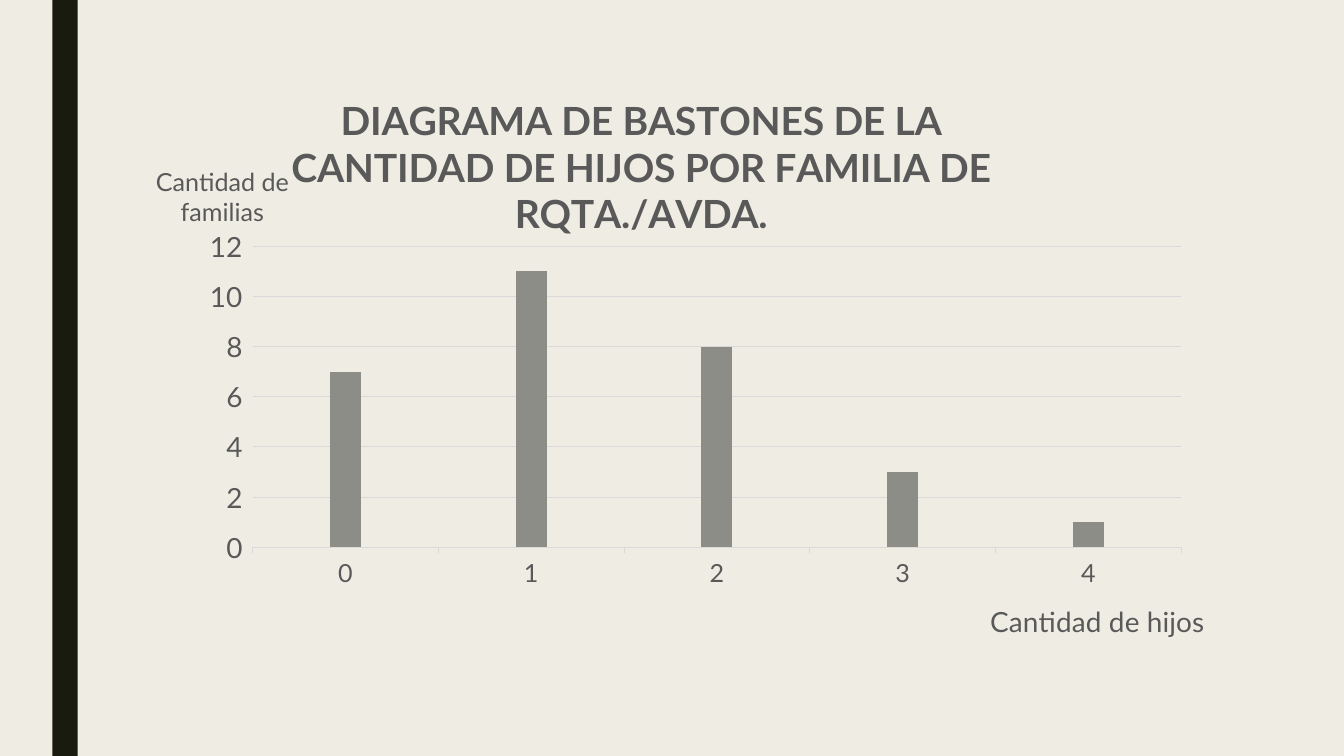
from dataclasses import dataclass

from lxml import etree
from pptx import Presentation
from pptx.chart.data import CategoryChartData
from pptx.dml.color import RGBColor
from pptx.enum.chart import XL_CHART_TYPE, XL_TICK_MARK
from pptx.enum.shapes import MSO_SHAPE
from pptx.oxml.ns import qn
from pptx.util import Inches, Pt

COLUMNS = XL_CHART_TYPE.COLUMN_CLUSTERED
RECTANGLE = MSO_SHAPE.RECTANGLE
TICK_OUTSIDE = XL_TICK_MARK.OUTSIDE

TITLE = ["DIAGRAMA DE BASTONES DE LA", "CANTIDAD DE HIJOS POR FAMILIA DE RQTA./AVDA."]
CHILDREN_LABEL = ["Cantidad de hijos"]
FAMILIES_LABEL = ["Cantidad de familias"]
FAMILIES_BY_CHILDREN = {"0": 7, "1": 11, "2": 8, "3": 3, "4": 1}

SLIDE_SIZE = (13.33, 7.5)
STRIPE_BOX = (0.52, 0, 0.25, 7.5)
CHART_BOX = (1.5, 0.8, 10.5, 5.62)

# Shares of the chart's size: left, top and, for the plot, width and height
TITLE_PLACE = (0.13, 0.02)
FAMILIES_PLACE = (0.0, 0.14)
CHILDREN_PLACE = (0.79, 0.92)
PLOT_PLACE = (0.096, 0.296, 0.88, 0.537)


@dataclass(frozen=True)
class Theme:
    font: str = "Lato"
    background: str = "EFEDE3"
    stripe: str = "191B0E"
    text: str = "595959"
    rule: str = "D9D9D9"
    column: str = "8C8D86"
    title_size: int = 28
    large: int = 20
    small: int = 18
    rule_width: float = 0.75


THEME = Theme()


def color(value):
    return RGBColor.from_string(value)


def format_font(font, size, bold=False):
    font.name = THEME.font
    font.size = Pt(size)
    font.bold = bold
    font.color.rgb = color(THEME.text)


def format_rule(line):
    line.color.rgb = color(THEME.rule)
    line.width = Pt(THEME.rule_width)


def place(part, shares, index, inner=False):
    """Give a chart part a manual layout as its child at the given index."""
    for automatic in part.findall(qn("c:layout")):
        part.remove(automatic)
    layout = etree.Element(qn("c:layout"))
    part.insert(index, layout)
    manual = etree.SubElement(layout, qn("c:manualLayout"))
    settings = [("layoutTarget", "inner")] if inner else []
    settings += [("xMode", "edge"), ("yMode", "edge")]
    settings += zip("xywh", shares)
    for name, value in settings:
        etree.SubElement(manual, qn(f"c:{name}")).set("val", str(value))


def write_title(title, lines, shares, size, bold=False):
    frame = title.text_frame
    for index, text in enumerate(lines):
        para = frame.paragraphs[0] if index == 0 else frame.add_paragraph()
        format_font(para.font, size, bold)
        span = para.add_run()
        span.text = text
        format_font(span.font, size, bold)
    for body in title.element.iter(qn("a:bodyPr")):
        body.set("rot", "0")
        body.set("vert", "horz")
    place(title.element, shares, index=1)


def add_stripe(slide):
    stripe = slide.shapes.add_shape(RECTANGLE, *map(Inches, STRIPE_BOX))
    stripe.shadow.inherit = False
    stripe.fill.solid()
    stripe.fill.fore_color.rgb = color(THEME.stripe)
    stripe.line.fill.background()


def add_families_chart(slide):
    data = CategoryChartData()
    data.categories = list(FAMILIES_BY_CHILDREN)
    data.add_series("Series 1", FAMILIES_BY_CHILDREN.values())
    chart = slide.shapes.add_chart(COLUMNS, *map(Inches, CHART_BOX), data).chart
    chart.has_legend = False
    format_font(chart.font, THEME.small)
    write_title(chart.chart_title, TITLE, TITLE_PLACE, THEME.title_size, bold=True)

    plot = chart.plots[0]
    plot.vary_by_categories = False
    plot.gap_width = 500
    plot.overlap = -50
    fill = plot.series[0].format.fill
    fill.solid()
    fill.fore_color.rgb = color(THEME.column)

    children, families = chart.category_axis, chart.value_axis
    axes = (
        (children, CHILDREN_LABEL, CHILDREN_PLACE, THEME.large, THEME.small),
        (families, FAMILIES_LABEL, FAMILIES_PLACE, THEME.small, THEME.large),
    )
    for axis, label, shares, label_size, tick_size in axes:
        axis.major_tick_mark = TICK_OUTSIDE
        format_font(axis.tick_labels.font, tick_size)
        write_title(axis.axis_title, label, shares, label_size)
    format_rule(children.format.line)
    families.format.line.fill.background()
    families.minimum_scale, families.maximum_scale = 0, 12
    families.major_unit = 2
    format_rule(families.major_gridlines.format.line)

    area = chart.element.find(f".//{qn('c:plotArea')}")
    place(area, PLOT_PLACE, index=0, inner=True)


def main():
    deck = Presentation()
    deck.slide_width, deck.slide_height = map(Inches, SLIDE_SIZE)
    blank_layout = deck.slide_layouts[6]
    slide = deck.slides.add_slide(blank_layout)
    slide.background.fill.solid()
    slide.background.fill.fore_color.rgb = color(THEME.background)
    add_stripe(slide)
    add_families_chart(slide)
    deck.save("out.pptx")


if __name__ == "__main__":
    main()
